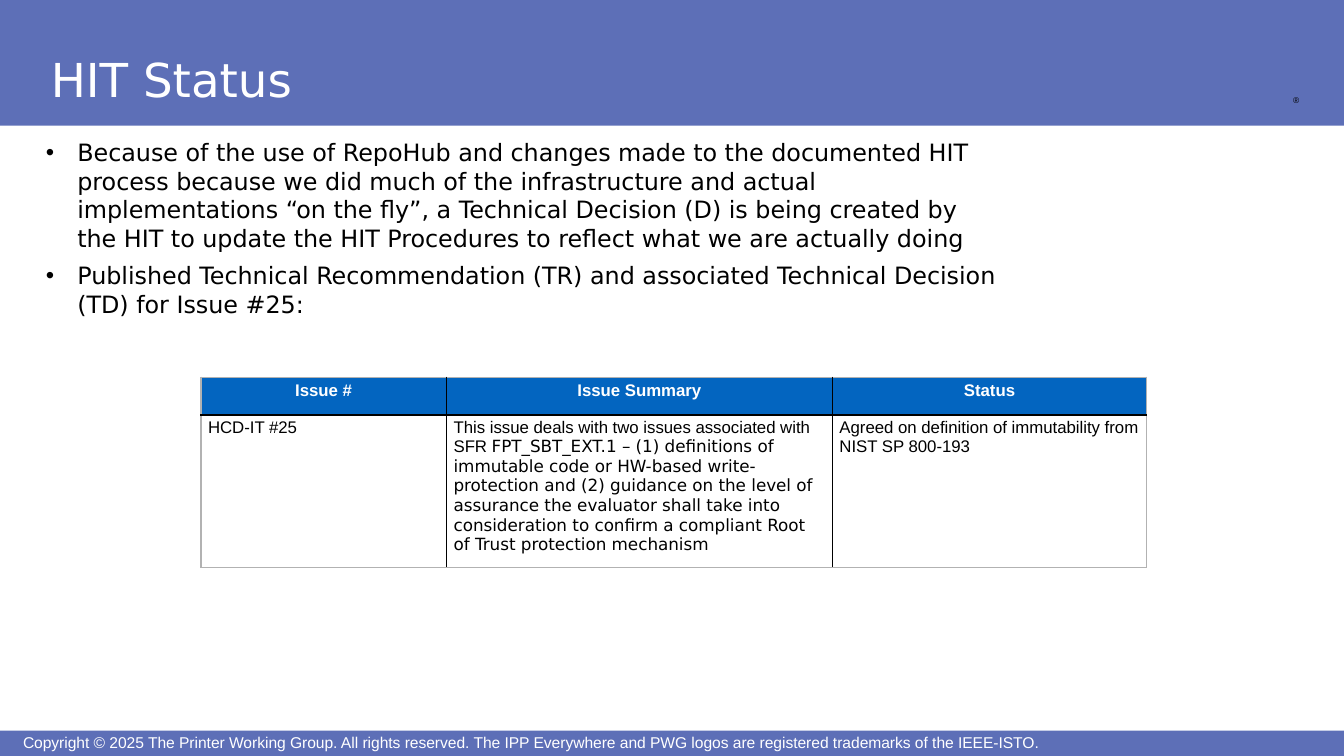
from pptx import Presentation
from pptx.dml.color import RGBColor
from pptx.enum.shapes import MSO_SHAPE
from pptx.enum.text import MSO_ANCHOR, MSO_AUTO_SIZE, PP_ALIGN
from pptx.oxml import parse_xml
from pptx.oxml.ns import nsdecls
from pptx.util import Inches, Pt
from dataclasses import dataclass


@dataclass(frozen=True)
class Theme:
    band: str = "5D6FB7"
    head: str = "0365C0"
    edge: str = "B2B2B2"
    ink: str = "000000"
    paper: str = "FFFFFF"
    sans: str = "Arial"
    wide: str = "DejaVu Sans"
    title: float = 27.8
    body: float = 14.2
    cell: float = 10
    foot: float = 9.3
    mark: float = 5


theme = Theme()
WIDTH, HEIGHT = 11.11, 6.25
PAD = (0.06, 0.06, 0.12, 0.06)


def write(par, text, size, font=theme.sans, color=theme.ink, bold=False,
          align=PP_ALIGN.LEFT):
    """Add one formatted run to a paragraph."""
    par.alignment = align
    run = par.add_run()
    run.text = text
    run.font.size, run.font.name, run.font.bold = Pt(size), font, bold
    run.font.color.rgb = RGBColor.from_string(color)


def indent(par, left, hang=0):
    props = par._p.get_or_add_pPr()
    props.set("marL", str(Inches(left)))
    props.set("indent", str(Inches(-hang)))
    return props


def frame(shape, pad, anchor=MSO_ANCHOR.TOP, wrap=True):
    """Set margins and anchor, and give back the first paragraph."""
    box = shape.text_frame
    box.auto_size, box.word_wrap = MSO_AUTO_SIZE.NONE, wrap
    box.vertical_anchor = anchor
    (box.margin_left, box.margin_top,
     box.margin_right, box.margin_bottom) = map(Inches, pad)
    return box.paragraphs[0]


class Deck:
    def __init__(self, theme):
        self.theme = theme
        self.prs = Presentation()
        self.prs.slide_width = Inches(WIDTH)
        self.prs.slide_height = Inches(HEIGHT)
        self.slide = self.prs.slides.add_slide(self.prs.slide_layouts[5])
        self.shapes = self.slide.shapes

    def band(self, top, height):
        bar = self.shapes.add_shape(MSO_SHAPE.RECTANGLE, 0, Inches(top),
                                    Inches(WIDTH), Inches(height))
        bar.shadow.inherit = False
        bar.fill.solid()
        bar.fill.fore_color.rgb = RGBColor.from_string(self.theme.band)
        bar.line.fill.background()

    def title(self, text, at):
        shape = self.shapes.title
        shape.left, shape.top, shape.width, shape.height = map(Inches, at)
        # Bring the title in front of the band
        shape.element.getparent().append(shape.element)
        par = frame(shape, PAD, MSO_ANCHOR.BOTTOM)
        indent(par, 0.04)
        write(par, text, self.theme.title, self.theme.wide, self.theme.paper)

    def label(self, text, at, pad, left, anchor=MSO_ANCHOR.TOP, wrap=True,
              **style):
        shape = self.shapes.add_textbox(*map(Inches, at))
        par = frame(shape, pad, anchor, wrap)
        indent(par, left)
        write(par, text, **style)

    def bullets(self, items, at):
        shape = self.shapes.add_textbox(*map(Inches, at))
        par = frame(shape, PAD)
        for i, item in enumerate(items):
            if i:
                par = shape.text_frame.add_paragraph()
            props = indent(par, 0.26, 0.26)
            for tag in ('buFont typeface="Arial"', 'buChar char="•"'):
                props.append(parse_xml(f"<a:{tag} {nsdecls('a')}/>"))
            par.space_after = Pt(5)
            write(par, item, self.theme.body, self.theme.wide)

    def border(self, cell, sides):
        props = cell._tc.get_or_add_tcPr()
        for i, (side, color) in enumerate(sides.items()):
            props.insert(i, parse_xml(
                f'<a:ln{side} {nsdecls("a")} w="{Pt(1)}"><a:solidFill>'
                f'<a:srgbClr val="{color}"/></a:solidFill></a:ln{side}>'))

    def table(self, rows, at, widths, heights):
        grid = self.shapes.add_table(len(rows), len(widths),
                                     *map(Inches, at)).table
        grid.first_row = grid.horz_banding = False
        for col, width in zip(grid.columns, widths):
            col.width = Inches(width)
        for row, height in zip(grid.rows, heights):
            row.height = Inches(height)
        look = self.theme
        for r, row in enumerate(rows):
            for c, runs in enumerate(row):
                cell = grid.cell(r, c)
                cell.margin_left = cell.margin_right = Inches(0.06)
                cell.margin_top = cell.margin_bottom = Inches(0.03)
                style = {}
                if r == 0:
                    cell.fill.solid()
                    cell.fill.fore_color.rgb = RGBColor.from_string(look.head)
                    style = dict(color=look.paper, bold=True,
                                 align=PP_ALIGN.CENTER)
                else:
                    cell.fill.background()
                for text, font in runs:
                    write(cell.text_frame.paragraphs[0], text, look.cell,
                          font, **style)
                # Grey outside, black inside
                outer = {"L": c == 0, "R": c == len(widths) - 1,
                         "T": r == 0, "B": r == len(rows) - 1}
                self.border(cell, {side: look.edge if out else look.ink
                                   for side, out in outer.items()})


def main():
    deck = Deck(theme)

    # Bands, footer and mark
    deck.band(6.04, 0.21)
    deck.band(0, 1.04)
    deck.label("Copyright © 2025 The Printer Working Group. All rights "
               "reserved. The IPP Everywhere and PWG logos are registered "
               "trademarks of the IEEE-ISTO.", (0.15, 6.06, 10.39, 0.16),
               (0, 0, 0, 0), 0.04, MSO_ANCHOR.MIDDLE,
               size=theme.foot, color=theme.paper)
    deck.label("®", (10.58, 0.74, 0.27, 0.18), (0.05,) * 4, 0.06,
               wrap=False, size=theme.mark)

    # Title and bullets
    deck.title("HIT Status", (0.32, 0.01, 6.67, 0.93))
    deck.bullets([
        "Because of the use of RepoHub and changes made to the documented "
        "HIT process because we did much of the infrastructure and actual "
        "implementations “on the fly”, a Technical Decision (D) is being "
        "created by the HIT to update the HIT Procedures to reflect what we "
        "are actually doing",
        "Published Technical Recommendation (TR) and associated Technical "
        "Decision (TD) for Issue #25:",
    ], (0.32, 1.08, 8.06, 4.69))

    # Issue table
    sans, wide = theme.sans, theme.wide
    deck.table([
        [[(name, sans)] for name in ("Issue #", "Issue Summary", "Status")],
        [[("HCD-IT #25", sans)],
         [("This issue deals with two issues associated with SFR ", sans),
          ("FPT_SBT_EXT.1 – (1) definitions of immutable code or HW-based "
           "write-protection and (2) guidance on the level of assurance the "
           "evaluator shall take into consideration to confirm a compliant "
           "Root of Trust protection mechanism", wide)],
         [("Agreed on definition of immutability from NIST SP 800-193",
           sans)]],
    ], (1.66, 3.12, 7.82, 1.57), (2.03, 3.19, 2.6), (0.31, 1.26))

    deck.prs.save("out.pptx")


if __name__ == "__main__":
    main()
